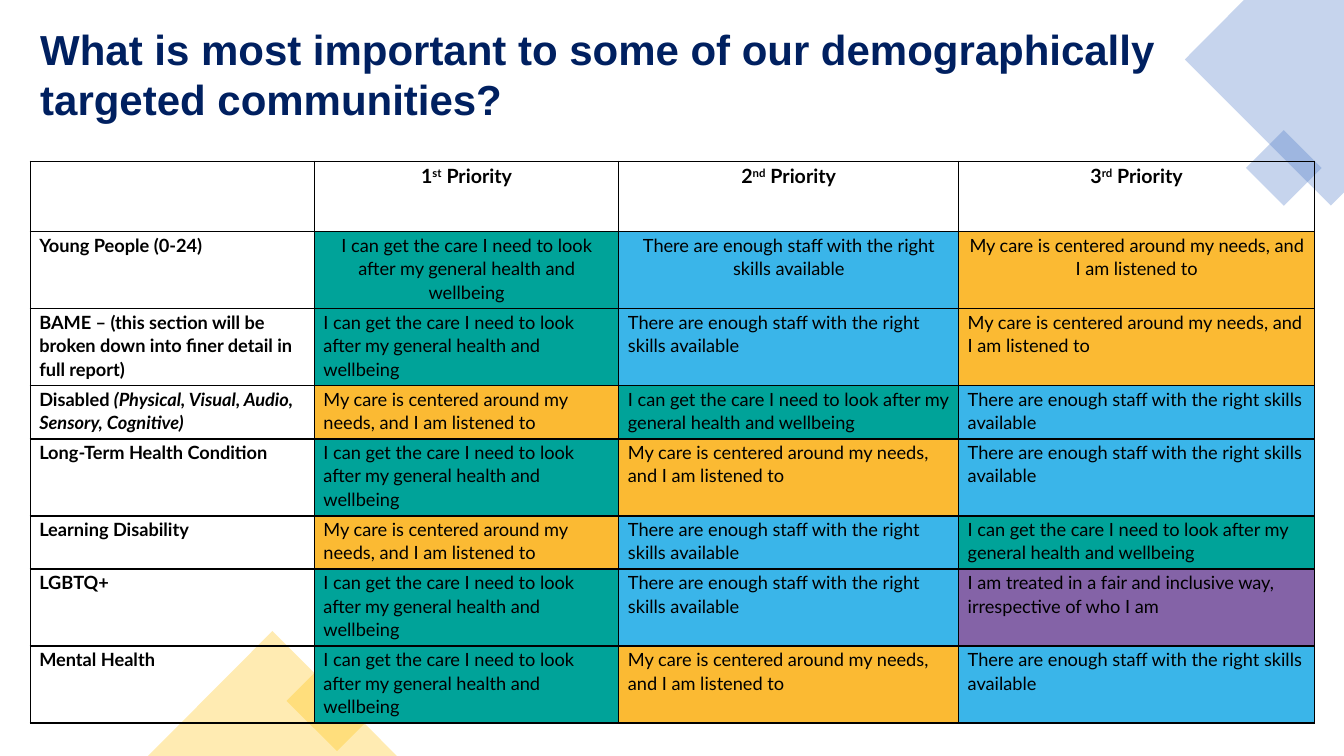
"""Build a slide ranking the top three care priorities of targeted communities."""
import pptx
import pptx.dml.color
import pptx.enum.shapes
import pptx.enum.text
import pptx.oxml
import pptx.oxml.ns
import pptx.util

Cm, Pt = pptx.util.Cm, pptx.util.Pt
RGB = pptx.dml.color.RGBColor.from_string
SHAPE = pptx.enum.shapes.MSO_SHAPE
ALIGN = pptx.enum.text.PP_ALIGN
COLORS = {
    "title": "002060", "text": "000000", "blue": "4472C4", "gold": "FFC000",
    "care": "00A399", "staff": "3AB5E9", "listened": "FBBA33", "fair": "8463A7",
}
ANSWERS = {
    "care": "I can get the care I need to look after my general health and wellbeing",
    "staff": "There are enough staff with the right skills available",
    "listened": "My care is centered around my needs, and I am listened to",
    "fair": "I am treated in a fair and inclusive way, irrespective of who I am",
}
COMMUNITIES = [
    ("Young People (0-24)", "", ["care", "staff", "listened"]),
    ("BAME – (this section will be broken down into finer detail in full report)", "",
     ["care", "staff", "listened"]),
    ("Disabled ", "(Physical, Visual, Audio, Sensory, Cognitive)",
     ["listened", "care", "staff"]),
    ("Long-Term Health Condition", "", ["care", "listened", "staff"]),
    ("Learning Disability", "", ["listened", "staff", "care"]),
    ("LGBTQ+", "", ["care", "staff", "fair"]),
    ("Mental Health", "", ["care", "listened", "staff"]),
]
COL_WIDTHS = [7.16, 7.67, 8.56, 8.97]
ROW_HEIGHTS = [1.78, 1.94, 1.94, 1.34, 1.94, 1.34, 1.94, 1.94]


def style_decoration(sp, color):
    sp.shadow.inherit = False
    sp.line.fill.background()
    sp.fill.solid()
    sp.fill.fore_color.rgb = RGB(COLORS[color])
    clr = sp._element.spPr.find(".//" + pptx.oxml.ns.qn("a:srgbClr"))
    clr.append(pptx.oxml.parse_xml(
        f'<a:alpha {pptx.oxml.ns.nsdecls("a")} val="30000"/>'))


def add_run(p, text, size, color="text", font="Lato", bold=False, italic=False):
    r = p.add_run()
    r.text = text
    r.font.name = font
    r.font.size = Pt(size)
    r.font.bold = bold
    r.font.italic = italic
    r.font.color.rgb = RGB(COLORS[color])
    return r


prs = pptx.Presentation()
prs.slide_width, prs.slide_height = Cm(33.86), Cm(19.05)
s = prs.slides.add_slide(prs.slide_layouts[5])

corner = [(33.86, 0), (31.34, 0), (29.85, 1.5), (33.53, 5.18), (33.86, 4.85)]
points = [(Cm(x), Cm(y)) for x, y in corner]
fb = s.shapes.build_freeform(*points[0])
fb.add_line_segments(points[1:], close=True)
style_decoration(fb.convert_to_shape(), "blue")

decorations = [
    (SHAPE.RECTANGLE, 31.67, 3.56, 1.35, 1.35, 45, "blue"),
    (SHAPE.RECTANGLE, 7.59, 16.76, 1.8, 1.8, 45, "gold"),
    (SHAPE.ISOSCELES_TRIANGLE, 3.73, 15.9, 6.27, 3.15, 0, "gold"),
]
for kind, x, y, w, h, angle, color in decorations:
    sp = s.shapes.add_shape(kind, Cm(x), Cm(y), Cm(w), Cm(h))
    sp.rotation = angle
    style_decoration(sp, color)

title = s.shapes.title
title.left, title.top, title.width, title.height = Cm(0.76), Cm(0.46), Cm(31.19), Cm(2.82)
tf = title.text_frame
tf.word_wrap = True
tf.auto_size = pptx.enum.text.MSO_AUTO_SIZE.NONE
tf.vertical_anchor = pptx.enum.text.MSO_ANCHOR.TOP
p = tf.paragraphs[0]
p.alignment = ALIGN.LEFT
add_run(p, "What is most important to some of our demographically targeted communities?",
        30, "title", "Arial", bold=True)

table = s.shapes.add_table(
    len(ROW_HEIGHTS), len(COL_WIDTHS), Cm(0.76), Cm(4.06),
    Cm(sum(COL_WIDTHS)), Cm(sum(ROW_HEIGHTS))).table
table.first_row = table.horz_banding = False
for col, width in zip(table.columns, COL_WIDTHS):
    col.width = Cm(width)
for row, height in zip(table.rows, ROW_HEIGHTS):
    row.height = Cm(height)

for cell in table.iter_cells():
    cell.margin_left = cell.margin_right = Cm(0.23)
    cell.margin_top, cell.margin_bottom = Cm(0.03), 0
    cell.text_frame.paragraphs[0].line_spacing = 1.07
    for side in "LRTB":
        cell._tc.get_or_add_tcPr().append(pptx.oxml.parse_xml(
            f'<a:ln{side} {pptx.oxml.ns.nsdecls("a")} w="12700"><a:solidFill>'
            f'<a:srgbClr val="{COLORS["text"]}"/></a:solidFill></a:ln{side}>'))
    cell.fill.background()

for i, ordinal in enumerate(["st", "nd", "rd"], 1):
    p = table.cell(0, i).text_frame.paragraphs[0]
    p.alignment = ALIGN.CENTER
    add_run(p, str(i), 14, bold=True)
    r = add_run(p, ordinal, 14, bold=True)
    r._r.get_or_add_rPr().set("baseline", "30000")
    add_run(p, " Priority", 14, bold=True)

for i, (name, detail, priorities) in enumerate(COMMUNITIES, 1):
    p = table.cell(i, 0).text_frame.paragraphs[0]
    add_run(p, name, 13, bold=True)
    if detail:
        add_run(p, detail, 13, bold=True, italic=True)
    for j, answer in enumerate(priorities, 1):
        cell = table.cell(i, j)
        cell.fill.solid()
        cell.fill.fore_color.rgb = RGB(COLORS[answer])
        p = cell.text_frame.paragraphs[0]
        p.alignment = ALIGN.CENTER if i == 1 else ALIGN.LEFT
        add_run(p, ANSWERS[answer], 13)

prs.save("out.pptx")
